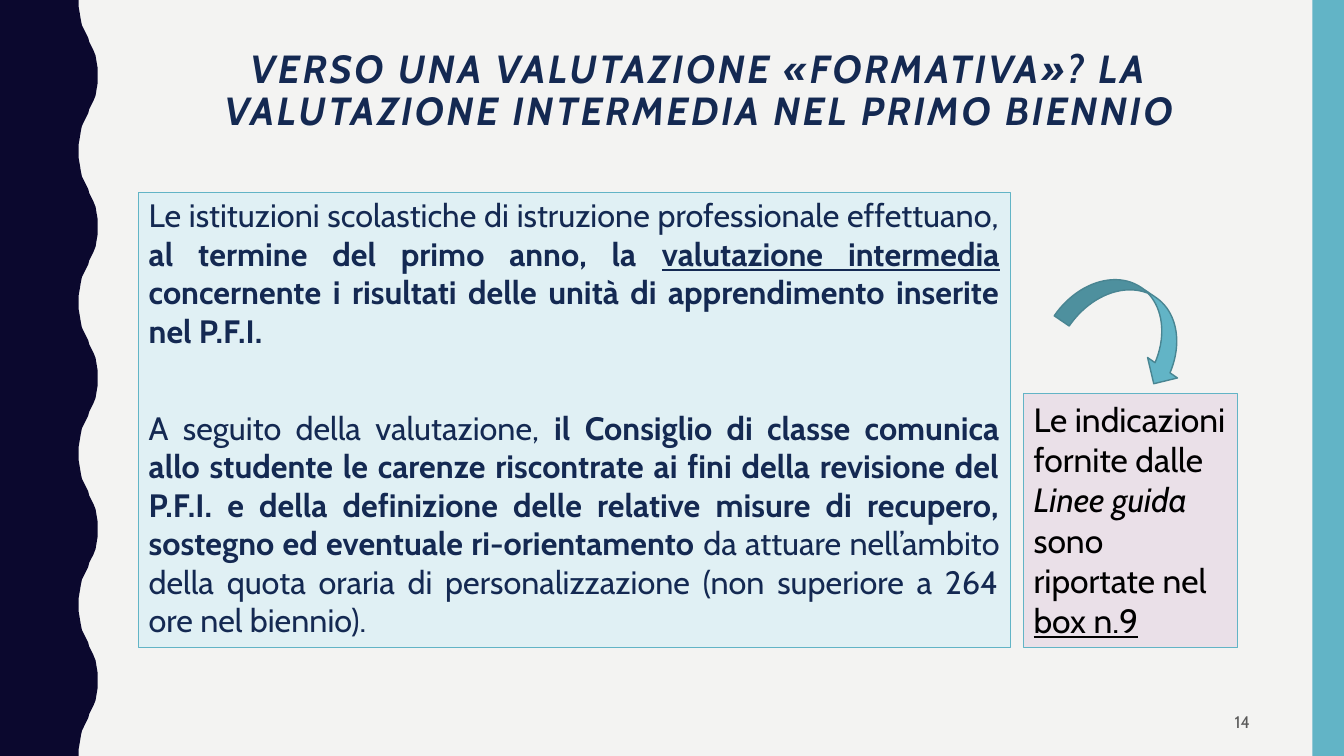
from pptx import Presentation
from pptx.dml.color import RGBColor
from pptx.enum.shapes import MSO_SHAPE
from pptx.enum.text import MSO_ANCHOR, MSO_AUTO_SIZE, PP_ALIGN
from pptx.util import Pt
from lxml.etree import SubElement
from pptx.oxml.ns import qn

PX = 9525  # 96 px to the inch
COLOURS = {
    "paper": "F3F3F2", "wave": "0B082E", "teal": "62B4C6", "teal dark": "498592",
    "navy": "142952", "ice": "E0F0F4", "mauve": "EAE0E8", "black": "000000",
    "grey": "595959",
}


def paint(shape, fill, line=None, width=0.75):
    """Fill and outline a shape with named colours; no line name means no outline."""
    shape.fill.solid()
    shape.fill.fore_color.rgb = RGBColor.from_string(COLOURS[fill])
    if line:
        shape.line.color.rgb = RGBColor.from_string(COLOURS[line])
        shape.line.width = Pt(width)
    else:
        shape.line.fill.background()


def write(paragraph, pieces, size, colour):
    """Add (text, style) pieces; style letters are b bold, i italic, u underline."""
    for text, style in pieces:
        run = paragraph.add_run()
        run.text = text
        font = run.font
        font.name, font.size = "Cabin", Pt(size)
        font.color.rgb = RGBColor.from_string(COLOURS[colour])
        font.bold, font.italic, font.underline = (letter in style for letter in "biu")


prs = Presentation()
prs.slide_width, prs.slide_height = 1280 * PX, 720 * PX
slide = prs.slides.add_slide(prs.slide_layouts[1])
slide.background.fill.solid()
slide.background.fill.fore_color.rgb = RGBColor.from_string(COLOURS["paper"])
shapes = slide.shapes

# Wavy left edge: half a wave, mirrored, repeated five times
PERIOD, WAVES = 144, 5
swell = [(75, 0), (75, 7), (76, 13), (77, 19), (78, 24), (80, 28), (82, 32), (84, 36),
         (85, 40), (87, 44), (89, 48), (91, 53), (92, 59), (93, 65), (93, 72)]
ebb = [(x, PERIOD - y) for x, y in reversed(swell[:-1])]
edge = [(x, y + PERIOD * i) for i in range(WAVES) for x, y in swell + ebb]
outline = shapes.build_freeform(0, 0, scale=PX)
outline.add_line_segments(edge + [(0, PERIOD * WAVES)], close=True)
wave = outline.convert_to_shape()
wave.shadow.inherit = False
paint(wave, "wave")

band = shapes.add_shape(MSO_SHAPE.RECTANGLE, 1250 * PX, 0, 30 * PX, 720 * PX)
band.shadow.inherit = False
paint(band, "teal")

# Title
title = shapes.title
title.left, title.top, title.width, title.height = 132 * PX, 40 * PX, 1068 * PX, 95 * PX
title.text_frame.auto_size = MSO_AUTO_SIZE.NONE
title.text_frame.vertical_anchor = MSO_ANCHOR.MIDDLE
heading = title.text_frame.paragraphs[0]
heading.alignment = PP_ALIGN.CENTER
heading.line_spacing = 0.9
write(heading, [("VERSO UNA VALUTAZIONE «FORMATIVA»? LA VALUTAZIONE INTERMEDIA "
                 "NEL PRIMO BIENNIO", "bi")], 28, "navy")
heading.runs[0].font._element.set("spc", "200")

# Assessment rules
rules = [
    [("Le istituzioni scolastiche di istruzione professionale effettuano, ", ""),
     ("al termine del primo anno, la ", "b"),
     ("valutazione intermedia", "bu"),
     (" concernente i risultati delle unità di apprendimento inserite nel P.F.I. ", "b")],
    [("A seguito della valutazione, ", ""),
     ("il Consiglio di classe comunica allo studente le carenze riscontrate ai fini "
      "della revisione del P.F.I. e della definizione delle relative misure di recupero, "
      "sostegno ed eventuale ri-orientamento ", "b"),
     ("da attuare nell’ambito della quota oraria di personalizzazione "
      "(non superiore a 264 ore nel biennio).", "")],
]
body = slide.placeholders[1]
body.left, body.top, body.width, body.height = 132 * PX, 183 * PX, 830 * PX, 434 * PX
paint(body, "ice", "teal")
body.text_frame.auto_size = MSO_AUTO_SIZE.NONE
body.text_frame.vertical_anchor = MSO_ANCHOR.TOP
for i, pieces in enumerate(rules):
    rule = body.text_frame.paragraphs[0] if i == 0 else body.text_frame.add_paragraph()
    rule.alignment = PP_ALIGN.JUSTIFY
    rule.line_spacing = 0.99
    rule.space_before = Pt(42 * i)
    properties = rule._p.get_or_add_pPr()
    properties.set("marL", "0")
    properties.set("indent", "0")
    SubElement(properties, qn("a:buNone"))
    write(rule, pieces, 23.1, "navy")

# Slide number
number = shapes.add_textbox(904 * PX, 669 * PX, 296 * PX, 36 * PX)
number.text_frame.word_wrap = True
number.text_frame.vertical_anchor = MSO_ANCHOR.MIDDLE
number.text_frame.paragraphs[0].alignment = PP_ALIGN.RIGHT
write(number.text_frame.paragraphs[0], [("14", "")], 12, "grey")

# Guideline note and the arrow leading to it
note = shapes.add_textbox(975 * PX, 375 * PX, 204 * PX, 242 * PX)
note.text_frame.word_wrap = True
note.text_frame.auto_size = MSO_AUTO_SIZE.SHAPE_TO_FIT_TEXT
paint(note, "mauve", "teal")
write(note.text_frame.paragraphs[0],
      [("Le indicazioni fornite dalle ", ""), ("Linee guida", "i"),
       (" sono riportate nel ", ""), ("box n.9", "u")], 24, "black")

arrow = shapes.add_shape(MSO_SHAPE.CURVED_DOWN_ARROW, 1012 * PX, 275 * PX, 132 * PX, 69 * PX)
arrow.shadow.inherit = False
arrow.rotation = 34.3
paint(arrow, "teal", "teal dark", 1)

prs.save("out.pptx")
